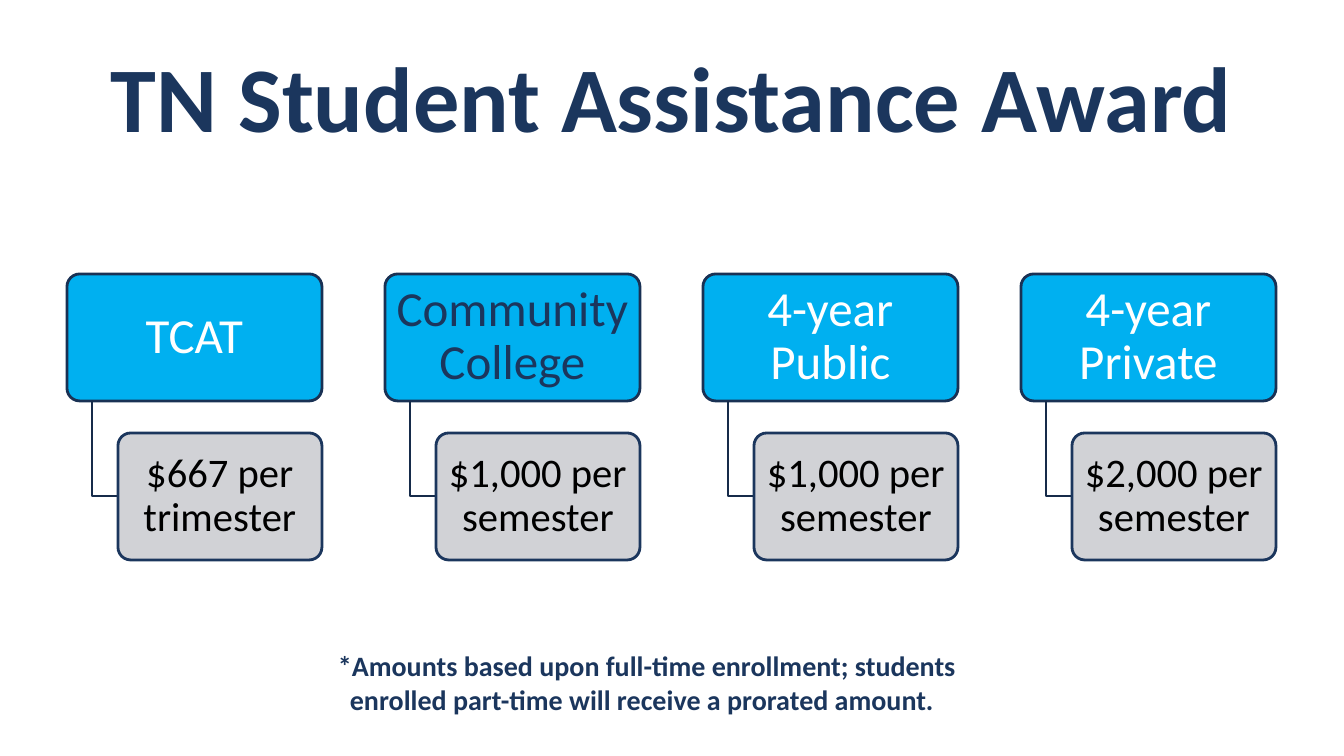
import pptx
import pptx.dml.color
import pptx.enum.shapes
import pptx.enum.text
import pptx.oxml
import pptx.oxml.ns
import pptx.util

PX = 12192000 / 1344
FONT = "Calibri"
COLORS = {
    "navy": "1B365D",
    "header_line": "193154",
    "branch": "162B4A",
    "sky": "00B0F0",
    "gray": "CDCED2",
    "white": "FFFFFF",
    "black": "000000",
}
AWARDS = [
    ("TCAT", "$667 per trimester", "white"),
    ("Community College", "$1,000 per semester", "navy"),
    ("4-year Public", "$1,000 per semester", "white"),
    ("4-year Private", "$2,000 per semester", "white"),
]
FIRST_LEFT, PITCH = 67, 318
HEADER_TOP, AMOUNT_TOP = 274, 433
HEADER_WIDTH, CARD_HEIGHT = 255, 127
BRANCH_INDENT, AMOUNT_INDENT = 25, 51


def px(length):
    """Turn a length in px into EMU."""
    return pptx.util.Emu(round(length * PX))


def rgb(color):
    """Look up a named colour."""
    return pptx.dml.color.RGBColor.from_string(COLORS[color])


def write(frame, text, size, color, bold=False):
    """Set the text of a frame, style its run and return the paragraph."""
    frame.word_wrap = True
    paragraph = frame.paragraphs[0]
    paragraph.text = text
    font = paragraph.runs[0].font
    font.name, font.size, font.bold = FONT, pptx.util.Pt(size), bold
    font.color.rgb = rgb(color)
    return paragraph


def outline(shape, color):
    """Give a shape a two-point line without shadow."""
    shape.line.color.rgb = rgb(color)
    shape.line.width = pptx.util.Pt(2)
    shape.shadow.inherit = False


def add_title(slide, text):
    """Add the centred slide title."""
    title = slide.shapes.add_textbox(px(67), px(33), px(1210), px(126))
    title.text_frame.vertical_anchor = pptx.enum.text.MSO_ANCHOR.MIDDLE
    paragraph = write(title.text_frame, text, 66, "navy", bold=True)
    paragraph.alignment = pptx.enum.text.PP_ALIGN.CENTER


def add_footnote(slide, text):
    """Add the footnote with a hanging indent."""
    footnote = slide.shapes.add_textbox(px(328), px(644), px(688), px(78))
    paragraph = write(footnote.text_frame, text, 20, "navy", bold=True)
    properties = paragraph._p.get_or_add_pPr()
    properties.set("marL", str(px(12)))
    properties.set("indent", str(-px(12)))


def add_card(slide, left, top, width, text, size, color, fill, line, margin):
    """Add a rounded card with centred text."""
    card = slide.shapes.add_shape(
        pptx.enum.shapes.MSO_SHAPE.ROUNDED_RECTANGLE,
        px(left), px(top), px(width), px(CARD_HEIGHT))
    card.adjustments[0] = 0.1
    card.fill.solid()
    card.fill.fore_color.rgb = rgb(fill)
    outline(card, line)
    frame = card.text_frame
    frame.margin_left = frame.margin_right = px(margin)
    frame.margin_top = frame.margin_bottom = px(margin - 2)
    frame.vertical_anchor = pptx.enum.text.MSO_ANCHOR.MIDDLE
    paragraph = write(frame, text, size, color)
    paragraph.alignment = pptx.enum.text.PP_ALIGN.CENTER
    paragraph.line_spacing = 0.9
    return card


def set_opacity(shape, percent):
    """Set the opacity of a solid fill."""
    fill_color = shape._element.spPr.find(
        pptx.oxml.ns.qn("a:solidFill")).find(pptx.oxml.ns.qn("a:srgbClr"))
    fill_color.append(pptx.oxml.parse_xml(
        f'<a:alpha {pptx.oxml.ns.nsdecls("a")} val="{percent * 1000}"/>'))


def add_branch(slide, left):
    """Draw the elbow from a header down to its amount."""
    start = left + BRANCH_INDENT
    middle = AMOUNT_TOP + CARD_HEIGHT // 2
    builder = slide.shapes.build_freeform(
        start, HEADER_TOP + CARD_HEIGHT, scale=PX)
    builder.add_line_segments(
        [(start, middle), (left + AMOUNT_INDENT, middle)], close=False)
    branch = builder.convert_to_shape()
    branch.fill.background()
    outline(branch, "branch")


def add_award(slide, left, school, amount, school_color):
    """Add a school type with its award amount."""
    add_card(slide, left, HEADER_TOP, HEADER_WIDTH, school, 35,
             school_color, "sky", "header_line", 7)
    add_branch(slide, left)
    amount_card = add_card(
        slide, left + AMOUNT_INDENT, AMOUNT_TOP, HEADER_WIDTH - AMOUNT_INDENT,
        amount, 29, "black", "gray", "navy", 6)
    set_opacity(amount_card, 90)


def main():
    """Build and save the slide."""
    presentation = pptx.Presentation()
    presentation.slide_width, presentation.slide_height = px(1344), px(756)
    slide = presentation.slides.add_slide(presentation.slide_layouts[6])
    add_title(slide, "TN Student Assistance Award")
    add_footnote(slide, "*Amounts based upon full-time enrollment; students "
                 "enrolled part-time will receive a prorated amount.")
    for column, award in enumerate(AWARDS):
        add_award(slide, FIRST_LEFT + column * PITCH, *award)
    presentation.save("out.pptx")


if __name__ == "__main__":
    main()
